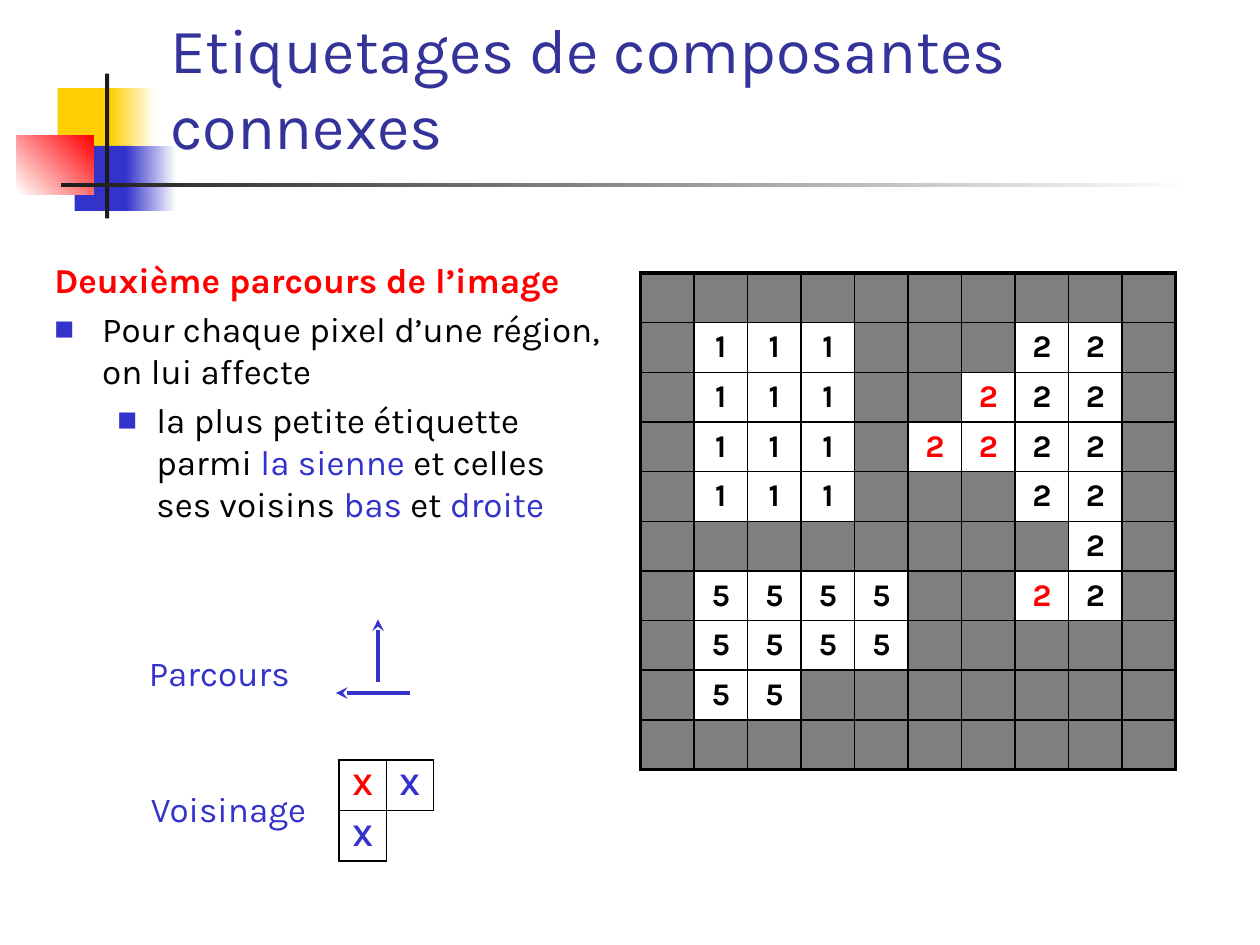
from dataclasses import dataclass

from lxml import etree
from pptx import Presentation
from pptx.dml.color import RGBColor
from pptx.enum.shapes import MSO_CONNECTOR, MSO_SHAPE
from pptx.enum.text import MSO_ANCHOR, MSO_AUTO_SIZE, PP_ALIGN
from pptx.oxml.ns import qn
from pptx.util import Inches, Pt

RECTANGLE = MSO_SHAPE.RECTANGLE
STRAIGHT = MSO_CONNECTOR.STRAIGHT
CENTER = PP_ALIGN.CENTER
MIDDLE, BOTTOM = MSO_ANCHOR.MIDDLE, MSO_ANCHOR.BOTTOM
GROW = MSO_AUTO_SIZE.SHAPE_TO_FIT_TEXT

COLUMNS, ROWS = 120, 90  # the slide grid: twelve units to the inch
TITLE_ONLY = 5


@dataclass(frozen=True)
class Theme:
    font: str = "Karla"
    title_size: int = 36
    body_size: int = 20
    cell_size: int = 18
    title: str = "333399"
    text: str = "000000"
    accent: str = "3333CC"
    highlight: str = "FF0000"
    yellow: str = "FFCF01"
    dark: str = "1C1C1C"
    white: str = "FFFFFF"
    thin: float = 1
    thick: float = 2.25


THEME = Theme()

# Cell codes: "." background pixel, "r" relabelled 2, "_" no cell
LABELS = [
    "..........",
    ".111...22.",
    ".111..r22.",
    ".111.rr22.",
    ".111...22.",
    "........2.",
    ".5555..r2.",
    ".5555.....",
    ".55.......",
    "..........",
]
NEIGHBOURS = ["XN", "N_"]
MARKS = {
    "r": ("2", THEME.highlight),
    "X": ("X", THEME.highlight),
    "N": ("X", THEME.accent),
    ".": ("", THEME.text),
    "_": ("", THEME.text),
}


def units(*values):
    return [Inches(value / 12) for value in values]


def rgb(value):
    return RGBColor.from_string(value)


def set_font(font, size, color=THEME.text, bold=False):
    font.name, font.size, font.bold = THEME.font, Pt(size), bold
    font.color.rgb = rgb(color)


def add_block(slide, box, start, end=None, angle=0):
    """Add a borderless rectangle, shaded from start to end if end is given."""
    block = slide.shapes.add_shape(RECTANGLE, *units(*box))
    block.shadow.inherit = False
    block.line.fill.background()
    if end is None:
        block.fill.solid()
        block.fill.fore_color.rgb = rgb(start)
        return
    block.fill.gradient()
    block.fill.gradient_angle = angle
    for stop, color in zip(block.fill.gradient_stops, (start, end)):
        stop.color.rgb = rgb(color)


def add_ornament(slide):
    add_block(slide, (5.5, 8.4, 5.8, 6.2), THEME.yellow)
    add_block(slide, (10.5, 8.4, 4.3, 6.2), THEME.yellow, THEME.white)
    add_block(slide, (7.1, 13.9, 5.5, 6.2), THEME.accent)
    add_block(slide, (12, 13.9, 4.8, 6.2), THEME.accent, THEME.white)
    add_block(slide, (1.6, 12.9, 7.3, 5.6), THEME.white, THEME.highlight, 45)
    add_block(slide, (10, 7, 0.4, 13.8), THEME.dark)
    add_block(slide, (5.8, 17.4, 108, 0.4), THEME.dark, THEME.white)


def format_title(slide, text):
    title = slide.shapes.title
    title.left, title.top, title.width, title.height = units(15, 4, 105, 12)
    title.element.getparent().append(title.element)  # in front of the ornament
    frame = title.text_frame
    frame.text = text
    frame.auto_size = MSO_AUTO_SIZE.NONE
    frame.vertical_anchor = BOTTOM
    paragraph = frame.paragraphs[0]
    paragraph.alignment = PP_ALIGN.LEFT
    set_font(paragraph.font, THEME.title_size, THEME.title)


def add_text_box(slide, box):
    frame = slide.shapes.add_textbox(*units(*box)).text_frame
    frame.word_wrap = True
    return frame


def add_label(slide, box, text):
    frame = add_text_box(slide, box)
    frame.auto_size = GROW
    frame.text = text
    set_font(frame.paragraphs[0].font, THEME.body_size, THEME.accent)


def set_indent(paragraph, margin, hanging, bullet):
    props = paragraph._p.get_or_add_pPr()
    props.set("marL", str(Inches(margin)))
    props.set("indent", str(-Inches(hanging)))
    if bullet:
        color = etree.SubElement(props, qn("a:buClr"))
        etree.SubElement(color, qn("a:srgbClr"), val=THEME.accent)
        etree.SubElement(props, qn("a:buSzPct"), val="60000")
        etree.SubElement(props, qn("a:buFont"), typeface=THEME.font)
        etree.SubElement(props, qn("a:buChar"), char="■")


def add_explanation(slide):
    black, blue, red = THEME.text, THEME.accent, THEME.highlight
    points = [
        (0, 0.38, 0.38, False, [("Deuxième parcours de l’image", red)]),
        (0, 0.38, 0.38, True,
         [("Pour chaque pixel d’une région, on lui affecte", black)]),
        (1, 0.81, 0.31, True,
         [("la plus petite étiquette parmi ", black), ("la sienne", blue),
          (" et celles ses voisins ", black), ("bas", blue),
          (" et ", black), ("droite", blue)]),
    ]
    frame = add_text_box(slide, (4, 24, 55, 35))
    for index, (level, margin, hanging, bullet, runs) in enumerate(points):
        paragraph = frame.add_paragraph() if index else frame.paragraphs[0]
        paragraph.level = level
        paragraph.space_before = Pt(THEME.body_size * 0.2)
        set_indent(paragraph, margin, hanging, bullet)
        for text, color in runs:
            run = paragraph.add_run()
            run.text = text
            set_font(run.font, THEME.body_size, color, bold=not bullet)


def add_arrow(slide, tip, tail):
    arrow = slide.shapes.add_connector(STRAIGHT, *units(*tip, *tail))
    arrow.line.color.rgb = rgb(THEME.accent)
    arrow.line.width = Pt(THEME.thick)
    etree.SubElement(arrow.line._get_or_add_ln(), qn("a:headEnd"), type="stealth")
    etree.SubElement(arrow._element.spPr, qn("a:effectLst"))


def set_borders(cell, widths):
    """Draw left, right, top and bottom borders; a width of 0 draws none."""
    props = cell._tc.get_or_add_tcPr()
    for index, (side, width) in enumerate(zip("LRTB", widths)):
        border = etree.Element(qn(f"a:ln{side}"), w=str(Pt(width)))
        if width:
            fill = etree.SubElement(border, qn("a:solidFill"))
            etree.SubElement(fill, qn("a:srgbClr"), val=THEME.text)
        else:
            etree.SubElement(border, qn("a:noFill"))
        props.insert(index, border)


def fill_cell(cell, code):
    if code == ".":
        cell.fill.solid()
        cell.fill.fore_color.rgb = rgb(THEME.text)
        color = cell._tc.tcPr.find(".//" + qn("a:srgbClr"))
        etree.SubElement(color, qn("a:alpha"), val="50000")
    else:
        cell.fill.background()
    text, color = MARKS.get(code, (code, THEME.text))
    cell.text = text
    cell.vertical_anchor = MIDDLE
    cell.margin_top = cell.margin_bottom = 0
    paragraph = cell.text_frame.paragraphs[0]
    paragraph.alignment = CENTER
    set_font(paragraph.font, THEME.cell_size, color, bold=True)


def add_pixels(slide, box, codes, outline):
    """Add a table with one cell per code and an outer border of width outline."""
    last_row, last_column = len(codes) - 1, len(codes[0]) - 1
    table = slide.shapes.add_table(last_row + 1, last_column + 1, *units(*box)).table
    table.first_row = table.horz_banding = False
    for row, line in enumerate(codes):
        for column, code in enumerate(line):
            cell = table.cell(row, column)
            fill_cell(cell, code)
            edge = 0 if code == "_" else outline
            at_edge = (column == 0, column == last_column, row == 0, row == last_row)
            set_borders(cell, [edge if outer else THEME.thin for outer in at_edge])


def main():
    deck = Presentation()
    deck.slide_width, deck.slide_height = units(COLUMNS, ROWS)
    slide = deck.slides.add_slide(deck.slide_layouts[TITLE_ONLY])
    add_ornament(slide)
    format_title(slide, "Etiquetages de composantes connexes")
    add_pixels(slide, (61, 26, 51, 47.3), LABELS, THEME.thick)
    add_explanation(slide)
    add_label(slide, (13, 61.5, 17, 5.2), "Parcours")
    add_arrow(slide, (32, 66), (39, 66))
    add_arrow(slide, (36, 59), (36, 65))
    add_label(slide, (13.2, 74.4, 18, 5.2), "Voisinage")
    add_pixels(slide, (32.3, 72.4, 9, 9.6), NEIGHBOURS, THEME.thin)
    deck.save("out.pptx")


if __name__ == "__main__":
    main()
